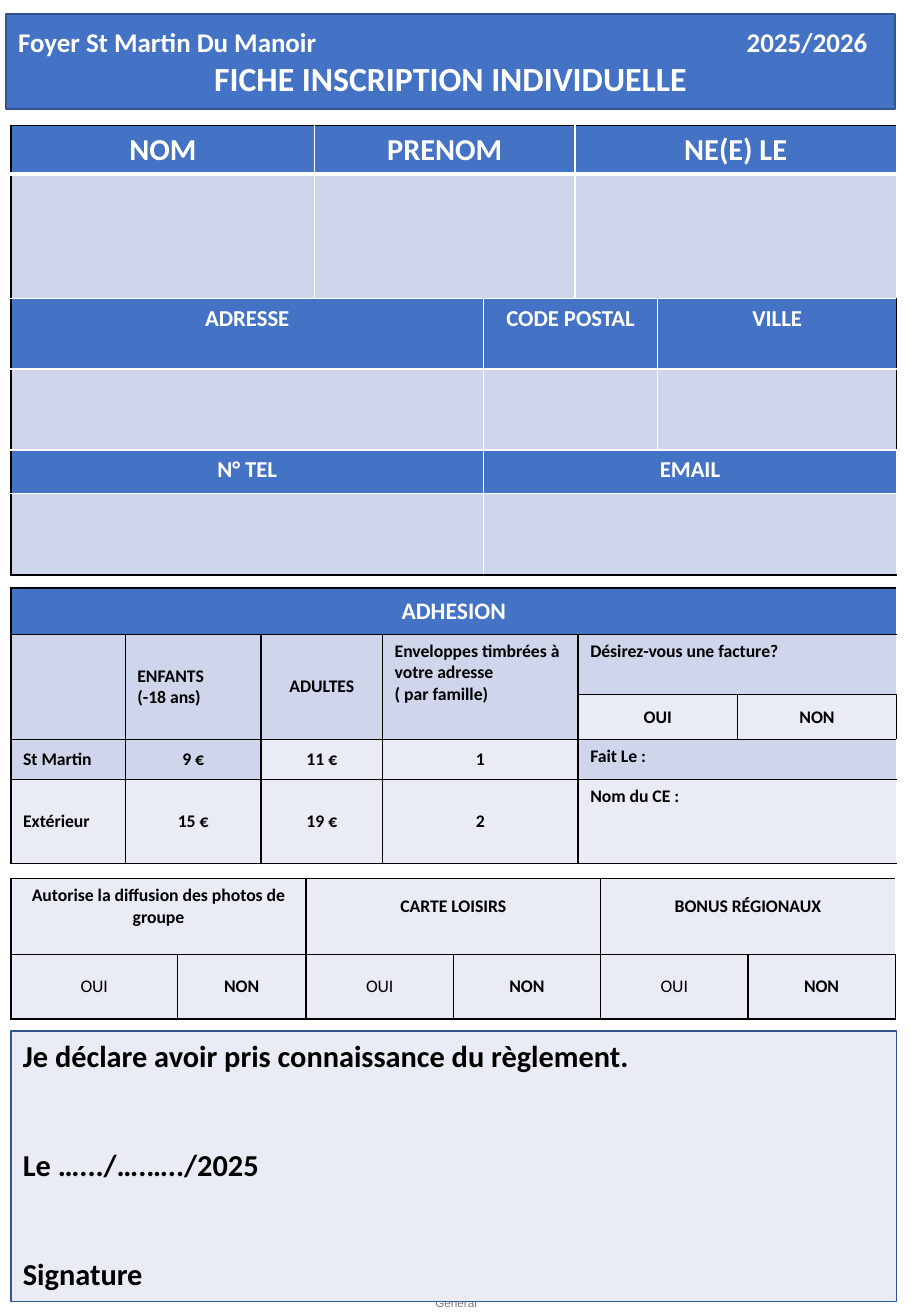
from dataclasses import dataclass

from lxml.etree import SubElement
from pptx import Presentation
from pptx.dml.color import RGBColor
from pptx.enum.shapes import MSO_SHAPE
from pptx.enum.text import MSO_ANCHOR as ANCHOR, PP_ALIGN as ALIGN
from pptx.oxml import parse_xml
from pptx.oxml.ns import nsdecls, qn
from pptx.util import Cm, Pt

BLUE = RGBColor(0x44, 0x72, 0xC4)
DARK_BLUE = RGBColor(0x32, 0x54, 0x91)
BAND = RGBColor(0xCF, 0xD5, 0xEA)
PALE = RGBColor(0xE9, 0xEB, 0xF5)
GREY = RGBColor(0x7F, 0x7F, 0x7F)
WHITE = RGBColor(0xFF, 0xFF, 0xFF)
BLACK = RGBColor(0, 0, 0)

LEFT, WIDTH = 0.23, 18.52


@dataclass
class Entry:
    row: int
    col: int
    text: str = ""
    fill: RGBColor = PALE
    rows: int = 1
    cols: int = 1
    size: float = 10.5
    color: RGBColor = BLACK
    bold: bool = True
    align: ALIGN = ALIGN.CENTER
    anchor: ANCHOR = ANCHOR.MIDDLE
    bottom: float = 0.13


@dataclass
class Form:
    top: float
    widths: list[float]
    heights: list[float]
    entries: list[Entry]
    inner: RGBColor = BLACK
    header_rule: float = 1


def add_text(p, text: str, size: float, color: RGBColor, bold: bool = True,
             font: str = "Calibri") -> None:
    r = p.add_run()
    r.text = text
    r.font.name, r.font.size, r.font.bold = font, Pt(size), bold
    r.font.color.rgb = color


def set_borders(cell, sides: dict[str, tuple[RGBColor, float]]) -> None:
    """Put border lines, keyed L, R, T, B, ahead of the cell's fill."""
    tc_pr = cell._tc.get_or_add_tcPr()
    ordered = [side for side in "LRTB" if side in sides]
    for i, side in enumerate(ordered):
        color, width = sides[side]
        tc_pr.insert(i, parse_xml(
            f'<a:ln{side} {nsdecls("a")} w="{Pt(width)}"><a:solidFill>'
            f'<a:srgbClr val="{color}"/></a:solidFill></a:ln{side}>'))


def draw_entry(table, form: Form, e: Entry) -> None:
    last_row, last_col = e.row + e.rows - 1, e.col + e.cols - 1
    cell = table.cell(e.row, e.col)
    if e.rows * e.cols > 1:
        cell.merge(table.cell(last_row, last_col))

    def vertical(x: int) -> tuple[RGBColor, float]:
        return (BLACK if x in (0, len(form.widths)) else form.inner), 1

    def horizontal(y: int) -> tuple[RGBColor, float]:
        color = BLACK if y in (0, len(form.heights)) else form.inner
        return color, form.header_rule if y == 1 else 1

    for row in range(e.row, last_row + 1):
        for col in range(e.col, last_col + 1):
            part, sides = table.cell(row, col), {}
            part.fill.solid()
            part.fill.fore_color.rgb = e.fill
            if col == e.col:
                sides["L"] = vertical(col)
            if col == last_col:
                sides["R"] = vertical(col + 1)
            if row == e.row:
                sides["T"] = horizontal(row)
            if row == last_row:
                sides["B"] = horizontal(row + 1)
            set_borders(part, sides)

    cell.vertical_anchor = e.anchor
    cell.margin_bottom = Cm(e.bottom)
    tf = cell.text_frame
    for i, line in enumerate(e.text.split("\n") if e.text else []):
        p = tf.add_paragraph() if i else tf.paragraphs[0]
        p.alignment = e.align
        add_text(p, line, e.size, e.color, e.bold)


def draw_form(slide, form: Form) -> None:
    table = slide.shapes.add_table(
        len(form.heights), len(form.widths), Cm(LEFT), Cm(form.top),
        Cm(WIDTH), Cm(sum(form.heights))).table
    table.first_row = table.horz_banding = False
    for column, width in zip(table.columns, form.widths):
        column.width = Cm(width)
    for row, height in zip(table.rows, form.heights):
        row.height = Cm(height)
    for entry in form.entries:
        draw_entry(table, form, entry)


def add_panel(slide, left: float, top: float, width: float, height: float,
              fill: RGBColor, anchor: ANCHOR):
    sp = slide.shapes.add_shape(MSO_SHAPE.RECTANGLE, Cm(left), Cm(top),
                                Cm(width), Cm(height))
    sp.shadow.inherit = False
    sp.fill.solid()
    sp.fill.fore_color.rgb = fill
    sp.line.color.rgb, sp.line.width = DARK_BLUE, Pt(1)
    sp.text_frame.word_wrap = True
    sp.text_frame.vertical_anchor = anchor
    return sp.text_frame


def heading(row: int, col: int, text: str, cols: int = 1, size: float = 13.5) -> Entry:
    return Entry(row, col, text, BLUE, cols=cols, size=size, color=WHITE, anchor=ANCHOR.TOP)


def blank(row: int, col: int, cols: int = 1) -> Entry:
    return Entry(row, col, fill=BAND, cols=cols)


def note(row: int, col: int, text: str, fill: RGBColor, rows: int = 1, cols: int = 1,
         anchor: ANCHOR = ANCHOR.TOP) -> Entry:
    return Entry(row, col, text, fill, rows, cols, align=ALIGN.LEFT, anchor=anchor)


IDENTITY = Form(
    2.62, [6.35, 3.53, 1.91, 1.73, 5], [1.02, 2.6, 1.47, 1.7, 0.91, 1.7],
    [heading(0, 0, "NOM", size=18), heading(0, 1, "PRENOM", 2, 18),
     heading(0, 3, "NE(E) LE", 2, 18),
     blank(1, 0), blank(1, 1, 2), blank(1, 3, 2),
     heading(2, 0, "ADRESSE", 2), heading(2, 2, "CODE POSTAL", 2), heading(2, 4, "VILLE"),
     blank(3, 0, 2), blank(3, 2, 2), blank(3, 4),
     heading(4, 0, "N° TEL", 2), heading(4, 2, "EMAIL", 3),
     blank(5, 0, 2), blank(5, 2, 3)],
    inner=WHITE, header_rule=3)

MEMBERSHIP = Form(
    12.29, [2.39, 2.84, 2.54, 4.09, 3.33, 3.33], [0.97, 1.26, 0.94, 0.84, 1.75],
    [Entry(0, 0, "ADHESION", BLUE, cols=6, size=14, color=WHITE),
     Entry(1, 0, fill=BAND, rows=2),
     note(1, 1, "ENFANTS\n(-18 ans)", BAND, rows=2, anchor=ANCHOR.MIDDLE),
     Entry(1, 2, "ADULTES", BAND, rows=2),
     note(1, 3, "Enveloppes timbrées à votre adresse\n( par famille)", BAND, rows=2),
     note(1, 4, "Désirez-vous une facture?", BAND, cols=2),
     Entry(2, 4, "OUI"), Entry(2, 5, "NON"),
     note(3, 0, "St Martin", BAND, anchor=ANCHOR.MIDDLE),
     Entry(3, 1, "9 €", BAND), Entry(3, 2, "11 €"), Entry(3, 3, "1"),
     note(3, 4, "Fait Le :", BAND, cols=2),
     note(4, 0, "Extérieur", PALE, anchor=ANCHOR.MIDDLE),
     Entry(4, 1, "15 €"), Entry(4, 2, "19 €"), Entry(4, 3, "2"),
     note(4, 4, "Nom du CE :", PALE, cols=2)])

OPTIONS = ["Autorise la diffusion des photos de groupe", "CARTE LOISIRS", "BONUS RÉGIONAUX"]
CONSENT = Form(
    18.37, [3.48, 2.69] + [3.08] * 4, [1.57, 1.35],
    [Entry(0, 2 * i, option, cols=2, bottom=0.57) for i, option in enumerate(OPTIONS)]
    + [Entry(1, i, ("OUI", "NON")[i % 2], bold=i % 2 == 1) for i in range(6)])


def draw_footer(slide) -> None:
    tf = slide.shapes.add_textbox(Cm(8.79), Cm(26.95), Cm(1.5), Cm(0.56)).text_frame
    tf.margin_left = tf.margin_right = tf.margin_top = tf.margin_bottom = 0
    tf.vertical_anchor = ANCHOR.MIDDLE
    tf.word_wrap = True
    p = tf.paragraphs[0]
    p.alignment = ALIGN.CENTER
    add_text(p, "General", 7, GREY, False, "Arial")


def draw_banner(slide) -> None:
    tf = add_panel(slide, 0.13, 0.3, 18.59, 1.98, BLUE, ANCHOR.MIDDLE)
    p = tf.paragraphs[0]
    tabs = SubElement(p._p.get_or_add_pPr(), qn("a:tabLst"))
    SubElement(tabs, qn("a:tab"), pos=str(Cm(17.76)), algn="r")
    p.alignment = ALIGN.LEFT
    add_text(p, "Foyer St Martin Du Manoir\t2025/2026", 16, WHITE)
    p = tf.add_paragraph()
    p.alignment = ALIGN.CENTER
    add_text(p, "FICHE INSCRIPTION INDIVIDUELLE", 20, WHITE)


def draw_declaration(slide) -> None:
    tf = add_panel(slide, LEFT, 21.55, WIDTH, 5.66, PALE, ANCHOR.TOP)
    lines = ["Je déclare avoir pris connaissance du règlement.", "Le ….../….…../2025", "Signature"]
    for i, line in enumerate(lines):
        p = tf.add_paragraph() if i else tf.paragraphs[0]
        p.alignment = ALIGN.LEFT
        if i:
            p.space_before = Pt(43)
        add_text(p, line, 18, BLACK)


def main() -> None:
    prs = Presentation()
    prs.slide_width, prs.slide_height = Cm(19.05), Cm(27.51)
    slide = prs.slides.add_slide(prs.slide_layouts[6])
    draw_footer(slide)
    draw_banner(slide)
    draw_declaration(slide)
    for form in (IDENTITY, MEMBERSHIP, CONSENT):
        draw_form(slide, form)
    prs.save("out.pptx")


if __name__ == "__main__":
    main()
